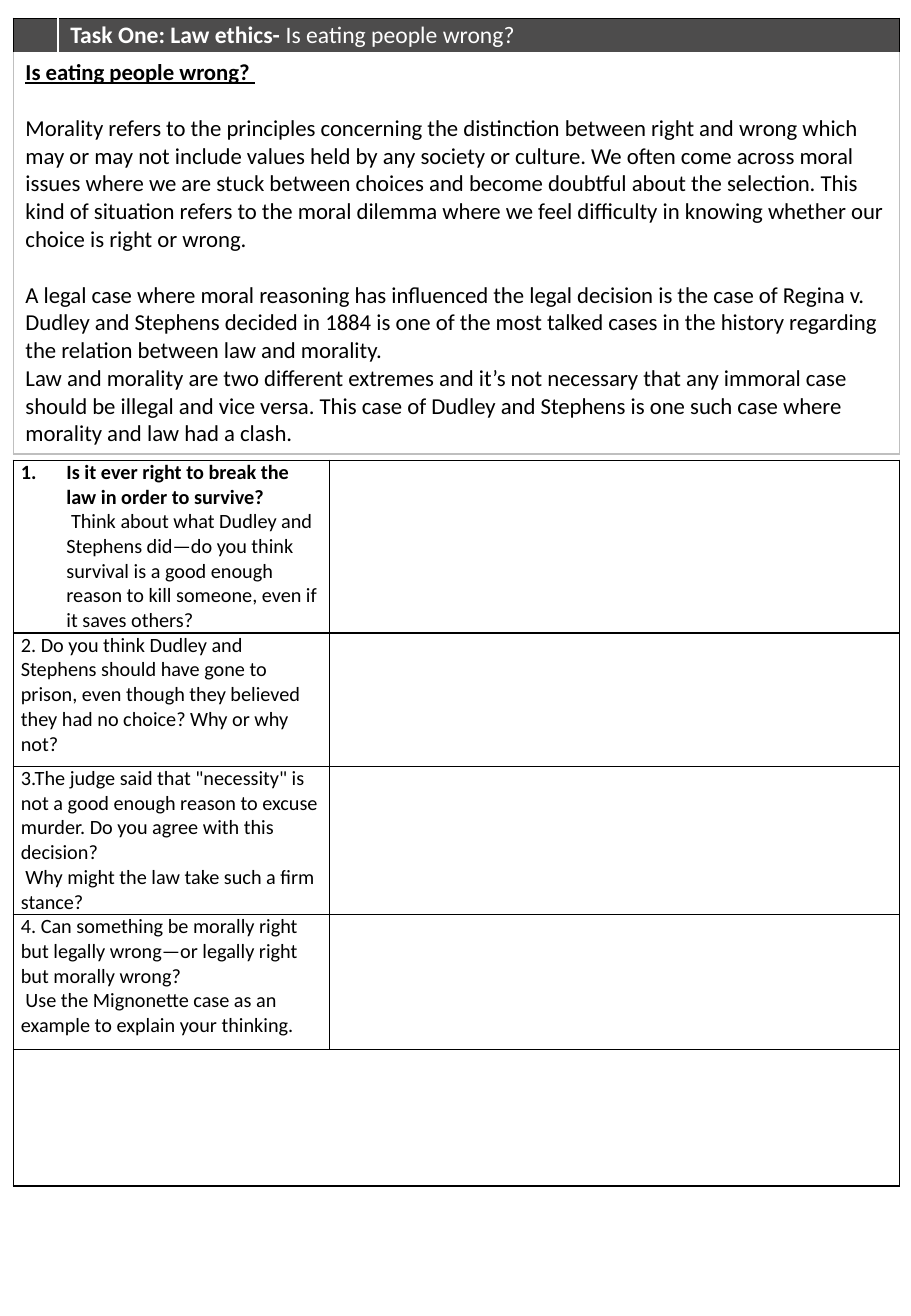
"""Builds a law ethics worksheet with a reading passage and a question grid."""
from lxml.etree import SubElement
from pptx import Presentation
from pptx.dml.color import RGBColor
from pptx.enum.text import MSO_ANCHOR
from pptx.oxml.ns import qn
from pptx.util import Pt

LEFT, WIDTH = 7.9, 525.3
BLACK, WHITE, DARK, GREY = "000000", "FFFFFF", "4D4C4C", "BFBFBF"


def add_grid(top, cols, rows):
    frame = slide.shapes.add_table(len(rows), len(cols), Pt(LEFT), Pt(top),
                                   Pt(WIDTH), Pt(sum(rows)))
    grid = frame.table
    grid.first_row = grid.horz_banding = False
    for col, width in zip(grid.columns, cols):
        col.width = Pt(width)
    for row, height in zip(grid.rows, rows):
        row.height = Pt(height)
    return grid


def style(cell, fill, line, ink, size, pad, sides="LRTB"):
    props = cell._tc.get_or_add_tcPr()
    for side in sides:
        edge = SubElement(props, qn("a:ln" + side), w=str(Pt(1)))
        paint = SubElement(edge, qn("a:solidFill"))
        SubElement(paint, qn("a:srgbClr"), val=line)
    cell.fill.solid()
    cell.fill.fore_color.rgb = RGBColor.from_string(fill)
    cell.margin_left = cell.margin_right = Pt(pad[0])
    cell.margin_top = cell.margin_bottom = Pt(pad[1])
    points = str(int(size * 100))
    for para in cell.text_frame.paragraphs:
        for run in para.runs:
            run.font.name, run.font.size = "Calibri", Pt(size)
            run.font.color.rgb = RGBColor.from_string(ink)
        for gap in para._p.findall(qn("a:br")):
            SubElement(gap, qn("a:rPr"), sz=points)
        if not para.runs:
            SubElement(para._p, qn("a:endParaRPr"), sz=points)


deck = Presentation()
deck.slide_width, deck.slide_height = Pt(540), Pt(779.76)
slide = deck.slides.add_slide(deck.slide_layouts[6])

passage = [
    "Is eating people wrong? ",
    "Morality refers to the principles concerning the distinction between right "
    "and wrong which may or may not include values held by any society or culture. "
    "We often come across moral issues where we are stuck between choices and "
    "become doubtful about the selection. This kind of situation refers to the "
    "moral dilemma where we feel difficulty in knowing whether our choice is right "
    "or wrong.",
    "A legal case where moral reasoning has influenced the legal decision is the "
    "case of Regina v. Dudley and Stephens decided in 1884 is one of the most "
    "talked cases in the history regarding the relation between law and morality.",
    "Law and morality are two different extremes and it’s not necessary that any "
    "immoral case should be illegal and vice versa. This case of Dudley and "
    "Stephens is one such case where morality and law had a clash.",
]
task = add_grid(10.8, [26.6, 498.7], [20.7, 237.6])
stub, head = task.cell(0, 0), task.cell(0, 1)
title = head.text_frame.paragraphs[0]
for words, bold in [("Task One: Law ethics- ", True),
                    ("Is eating people wrong?", False)]:
    run = title.add_run()
    run.text, run.font.bold = words, bold
head.vertical_anchor = MSO_ANCHOR.MIDDLE
style(stub, DARK, BLACK, WHITE, 14, (7.2, 0), "LTB")
style(head, DARK, BLACK, WHITE, 14, (7.2, 0), "RTB")

body = task.cell(1, 0)
body.merge(task.cell(1, 1))
body.text_frame.text = "\n".join(passage)
for cell in task.rows[1].cells:
    style(cell, WHITE, GREY, BLACK, 13.5, (7.2, 3.6), "LRB")
paras = body.text_frame.paragraphs
lead = paras[0].runs[0].font
lead.bold = lead.underline = True
for para in paras[1:3]:
    para.space_before = Pt(16.5)

asks = [
    "Is it ever right to break the law in order to survive?\v Think about what "
    "Dudley and Stephens did—do you think survival is a good enough reason to kill "
    "someone, even if it saves others?",
    "2. Do you think Dudley and Stephens should have gone to prison, even though "
    "they believed they had no choice? Why or why not?",
    "3.The judge said that \"necessity\" is not a good enough reason to excuse "
    "murder. Do you agree with this decision?\v Why might the law take such a firm "
    "stance?",
    "4. Can something be morally right but legally wrong—or legally right but "
    "morally wrong?\v Use the Mignonette case as an example to explain your "
    "thinking.",
]
quiz = add_grid(272.7, [187.4, 337.9], [102.3, 79, 87.5, 80, 81])
for row, ask in enumerate(asks):
    quiz.cell(row, 0).text_frame.paragraphs[0].text = ask
quiz.cell(4, 0).merge(quiz.cell(4, 1))
for cell in quiz.iter_cells():
    style(cell, WHITE, BLACK, BLACK, 12, (4.5, 0))

first = quiz.cell(0, 0).text_frame.paragraphs[0]
first.runs[0].font.bold = True
props = first._p.get_or_add_pPr()
props.set("marL", str(Pt(27)))
props.set("indent", str(-Pt(27)))
SubElement(props, qn("a:buFont"), typeface="+mj-lt")
SubElement(props, qn("a:buAutoNum"), type="arabicPeriod")

deck.save("out.pptx")
